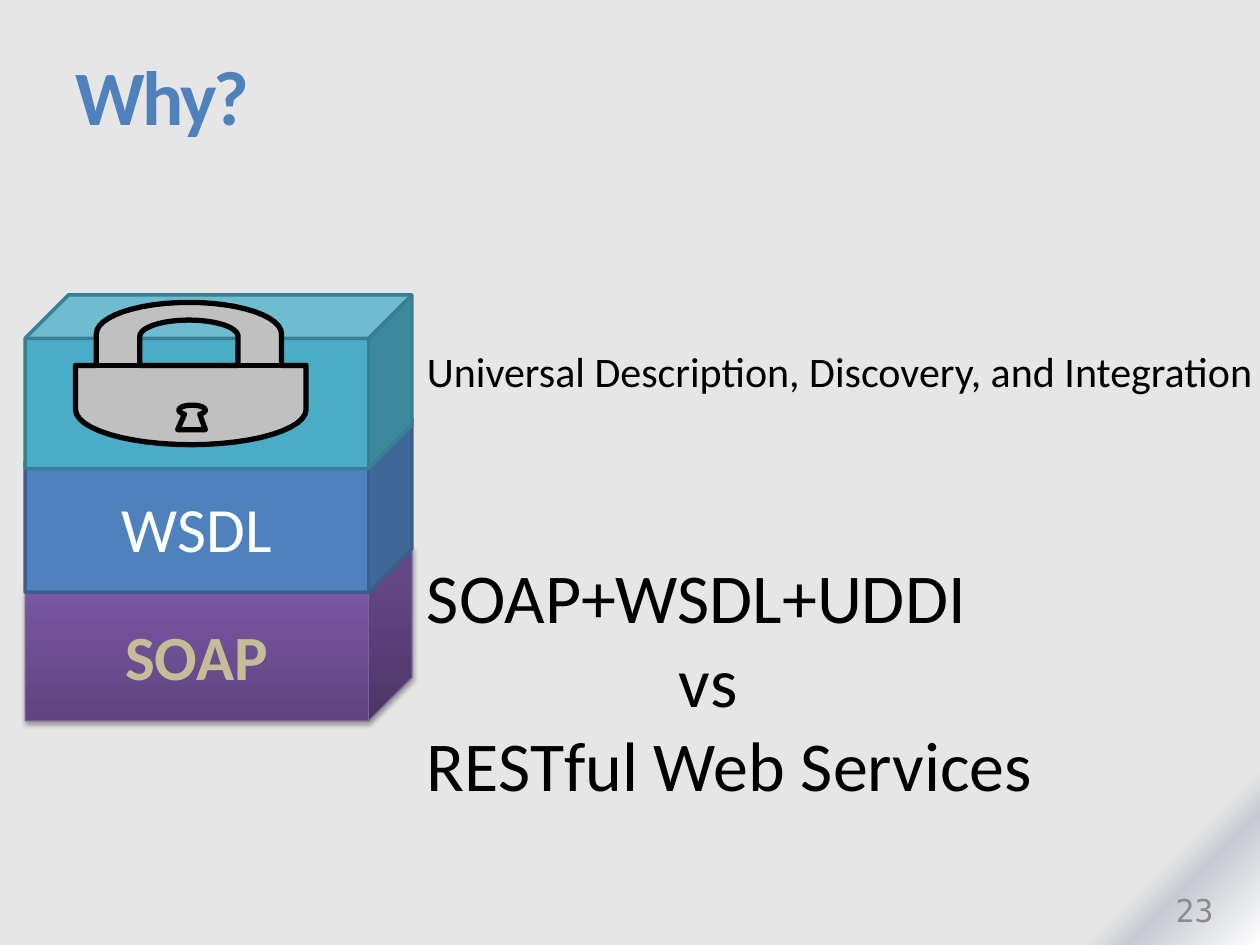
"""Build the "Why?" slide: a web service stack with a padlock beside its rival."""
from math import cos, radians, sin

from lxml.etree import SubElement
from pptx import Presentation
from pptx.dml.color import RGBColor
from pptx.enum.shapes import MSO_CONNECTOR, MSO_SHAPE
from pptx.enum.text import MSO_ANCHOR, PP_ALIGN
from pptx.oxml import parse_xml
from pptx.oxml.ns import nsdecls, qn
from pptx.util import Inches, Pt


def color(value):
    return RGBColor.from_string(value)


def gradient(stops, direction):
    marks = "".join(
        f'<a:gs pos="{share * 1000}"><a:srgbClr val="{value}"/></a:gs>'
        for share, value in stops
    )
    return parse_xml(
        f'<a:gradFill {nsdecls("a")} rotWithShape="1">'
        f"<a:gsLst>{marks}</a:gsLst>{direction}</a:gradFill>"
    )


def replace_fill(parent, fill):
    parent.replace(parent.find(qn("a:solidFill")), fill)


def arc(center_x, center_y, radius_x, radius_y, start, end, steps=24):
    angles = [radians(start + (end - start) * step / steps) for step in range(steps + 1)]
    return [(center_x + radius_x * cos(a), center_y - radius_y * sin(a)) for a in angles]


class SlideMaker:
    font = "Calibri"
    black = "000000"

    def __init__(self, deck):
        self.deck = deck
        self.page = deck.slides.add_slide(deck.slide_layouts[5])

    def x(self, percent):
        return round(self.deck.slide_width * percent / 100)

    def y(self, percent):
        return round(self.deck.slide_height * percent / 100)

    def area(self, left, top, width, height):
        return self.x(left), self.y(top), self.x(width), self.y(height)

    def background(self, stops):
        fill = self.page.background.fill
        fill.solid()
        direction = '<a:path path="circle"><a:fillToRect l="100000" t="100000"/></a:path>'
        properties = self.page._element.cSld.find(qn("p:bg")).find(qn("p:bgPr"))
        replace_fill(properties, gradient(stops, direction))

    def add_span(self, para, text, size, value, bold=False, font=None):
        span = para.add_run()
        span.text = text
        span.font.size = Pt(size)
        span.font.name = font or self.font
        span.font.bold = bold
        span.font.color.rgb = color(value)
        return span

    def title(self, text, place):
        box = self.page.shapes.title
        box.left, box.top, box.width, box.height = self.area(*place)
        box.text_frame.vertical_anchor = MSO_ANCHOR.MIDDLE
        para = box.text_frame.paragraphs[0]
        para.alignment = PP_ALIGN.LEFT
        span = self.add_span(para, text, 44, "4F81BD", bold=True)
        span.font._element.set("spc", "-150")

    def text(self, lines, place, size, value=black, align=PP_ALIGN.LEFT,
             anchor=MSO_ANCHOR.TOP, font=None):
        frame = self.page.shapes.add_textbox(*self.area(*place)).text_frame
        frame.word_wrap = True
        frame.vertical_anchor = anchor
        for number, (line, indent) in enumerate(lines):
            para = frame.add_paragraph() if number else frame.paragraphs[0]
            para.alignment = align
            para._p.get_or_add_pPr().set("marL", str(self.x(indent)))
            self.add_span(para, line, size, value, font=font)

    def paint(self, shape, fill, line, weight):
        shape.shadow.inherit = False
        shape.fill.solid()
        shape.fill.fore_color.rgb = color(fill)
        shape.line.color.rgb = color(line)
        shape.line.width = Pt(weight)

    def cube(self, top, fill, line, weight=2):
        shape = self.page.shapes.add_shape(MSO_SHAPE.CUBE, *self.area(2, top, 30.7, 18.4))
        self.paint(shape, fill, line, weight)
        return shape

    def label(self, shape, text, value, bold=False):
        shape.text_frame.vertical_anchor = MSO_ANCHOR.MIDDLE
        para = shape.text_frame.paragraphs[0]
        para.alignment = PP_ALIGN.CENTER
        self.add_span(para, text, 36, value, bold)

    def shade(self, shape, stops):
        properties = shape._element.spPr
        replace_fill(properties, gradient(stops, '<a:lin ang="16200000" scaled="0"/>'))
        shadow = SubElement(
            properties.find(qn("a:effectLst")), qn("a:outerShdw"),
            blurRad=str(Pt(3.1)), dist=str(Pt(1.8)), dir="5400000", rotWithShape="0",
        )
        tint = SubElement(shadow, qn("a:srgbClr"), val=self.black)
        SubElement(tint, qn("a:alpha"), val="35000")

    def outline(self, *contours):
        rings = [[(self.x(h), self.y(v)) for h, v in contour] for contour in contours]
        builder = self.page.shapes.build_freeform(*rings[0][0], scale=1.0)
        for number, points in enumerate(rings):
            if number:
                builder.move_to(*points[0])
            builder.add_line_segments(points[1:], close=True)
        self.paint(builder.convert_to_shape(), "C0C0C0", self.black, 3)

    def rule(self, left, right, level):
        line = self.page.shapes.add_connector(
            MSO_CONNECTOR.STRAIGHT, self.x(left), self.y(level), self.x(right), self.y(level)
        )
        line.line.color.rgb = color(self.black)
        line.line.width = Pt(3)
        SubElement(line._element.spPr, qn("a:effectLst"))

    def padlock(self):
        middle, seam, left, right = 15, 38.67, 6, 24.3
        shackle = arc(middle, 35.33, 7.35, 3.33, 180, 0)
        belly = arc((left + right) / 2, 43.33, (right - left) / 2, 3.73, 0, -180)
        body = [(left, seam), (shackle[0][0], seam), *shackle,
                (shackle[-1][0], seam), (right, seam), *belly]
        opening = arc(middle, 35.6, 3.9, 1.73, 180, 0)
        hole = [(opening[0][0], seam), *opening, (opening[-1][0], seam)]
        keyhole = [*arc(15.25, 43.4, 1.05, 0.53, 235, -55), (16.3, 45.47), (14.1, 45.47)]
        self.outline(body, hole)
        self.rule(left, right, seam)
        self.outline(keyhole)


def main():
    deck = Presentation()
    deck.slide_width, deck.slide_height = Inches(10), Inches(7.5)
    maker = SlideMaker(deck)
    maker.background([(0, "FFFFFF"), (6, "C7CAD2"), (8, "E6E6E6"), (56, "E6E6E6")])
    maker.title("Why?", (5, 1.73, 90, 16.67))
    maker.text([("23", 0)], (71.7, 92.67, 25.6, 7.33), 18, "8C8C8C",
               PP_ALIGN.RIGHT, MSO_ANCHOR.MIDDLE, "DejaVu Sans Mono")

    soap = maker.cube(57.87, "7B58A6", "7D60A0", 0.75)
    maker.shade(soap, [(0, "5F4480"), (80, "7B58A6"), (100, "7C57A8")])
    maker.label(soap, "SOAP", "C4BD97", bold=True)
    wsdl = maker.cube(44.27, "4F81BD", "3A5F8C")
    maker.label(wsdl, "WSDL", "FFFFFF")
    maker.cube(31.2, "4BACC6", "377F92")
    maker.padlock()

    maker.text([("SOAP+WSDL+UDDI", 0), ("vs", 20), ("RESTful Web Services", 0)],
               (32.9, 57.87, 58.3, 28.27), 40)
    maker.text([("Universal Description, Discovery, and Integration", 0)],
               (32.9, 35.87, 69, 12.13), 24)
    deck.save("out.pptx")


if __name__ == "__main__":
    main()
